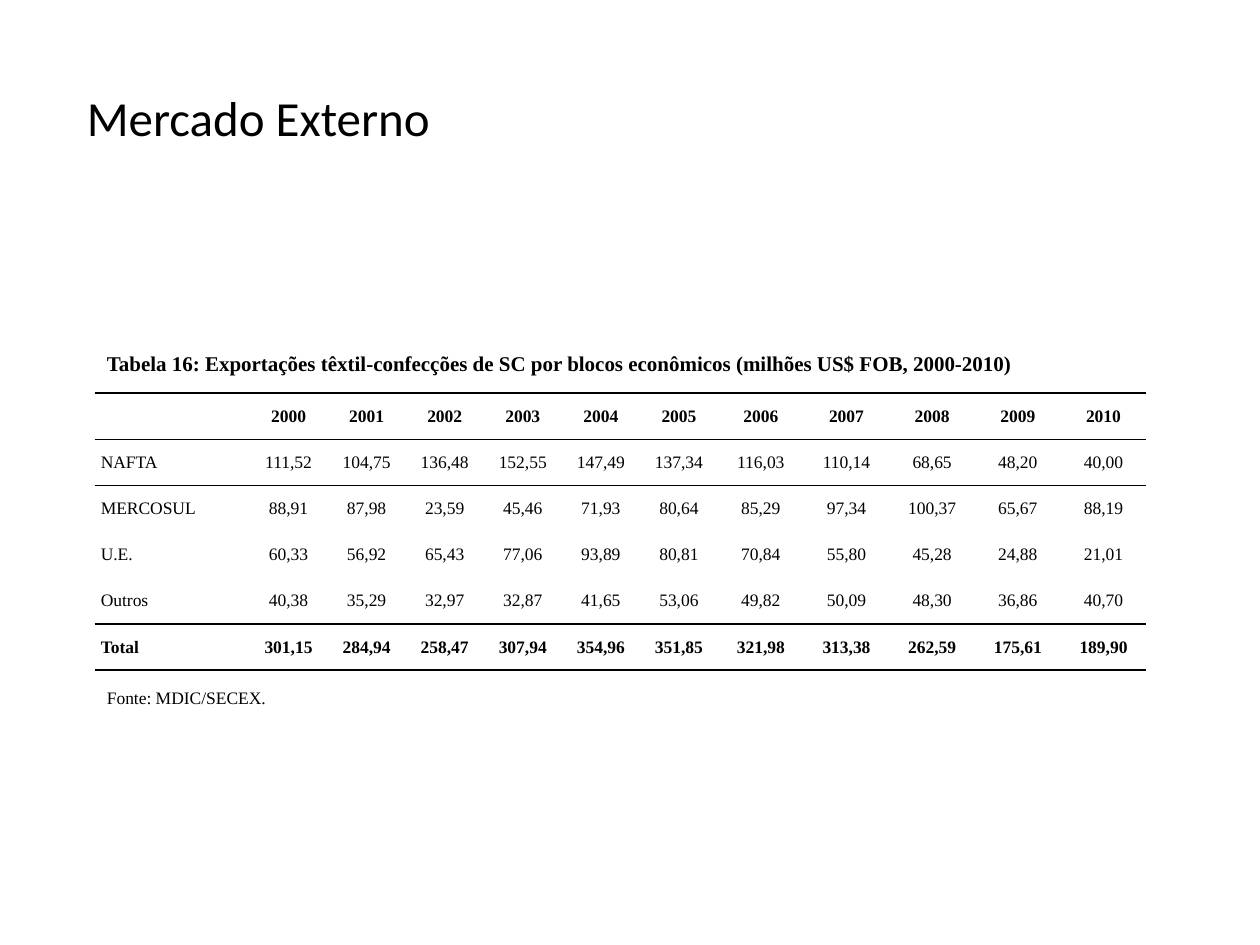
from lxml import etree
from pptx import Presentation
from pptx import util as u
from pptx.dml.color import RGBColor
from pptx.enum import text
from pptx.oxml.ns import qn

COLOURS = {"ink": "000000", "paper": "FFFFFF"}
SERIF = "Times New Roman"
UNIT = u.Inches(0.1)  # the page is a grid of 100 columns and 75 rows
NO_STYLE = "{2D5ABB26-0587-4C30-8999-92F81FD0307C}"

YEARS = [""] + [str(year) for year in range(2000, 2011)]
EXPORTS = """
NAFTA 111,52 104,75 136,48 152,55 147,49 137,34 116,03 110,14 68,65 48,20 40,00
MERCOSUL 88,91 87,98 23,59 45,46 71,93 80,64 85,29 97,34 100,37 65,67 88,19
U.E. 60,33 56,92 65,43 77,06 93,89 80,81 70,84 55,80 45,28 24,88 21,01
Outros 40,38 35,29 32,97 32,87 41,65 53,06 49,82 50,09 48,30 36,86 40,70
Total 301,15 284,94 258,47 307,94 354,96 351,85 321,98 313,38 262,59 175,61 189,90
"""
COLUMN_WEIGHTS = [12.3] + [6.2] * 6 + [6.8] * 5
RULED_EDGES = {0: "a:lnT", 1: "a:lnT", 4: "a:lnB", 5: "a:lnB"}  # by row


def grid(box):
    return [round(part * UNIT) for part in box]


def set_all(target, values):
    for name, value in values.items():
        setattr(target, name, value)


def write(para, words, **font):
    span = para.add_run()
    span.text = words
    set_all(span.font, font)
    span.font.color.rgb = RGBColor.from_string(COLOURS["ink"])


def add_line(page, box, words, frame_format, **font):
    frame = page.shapes.add_textbox(*grid(box)).text_frame
    set_all(frame, {"word_wrap": True, **frame_format})
    write(frame.paragraphs[0], words, **font)


def add_rule(cell, edge):
    line = etree.Element(qn(edge), w=str(u.Pt(1)))
    fill = etree.SubElement(line, qn("a:solidFill"))
    etree.SubElement(fill, qn("a:srgbClr"), val=COLOURS["ink"])
    cell._tc.get_or_add_tcPr().insert(0, line)


def add_exports_table(page, box):
    rows = [YEARS] + [line.split() for line in EXPORTS.strip().splitlines()]
    left, top, width, height = grid(box)
    table = page.shapes.add_table(
        len(rows), len(YEARS), left, top, width, height).table
    set_all(table, {"first_row": False, "horz_banding": False})
    table._tbl.tblPr.find(qn("a:tableStyleId")).text = NO_STYLE

    for column, weight in zip(table.columns, COLUMN_WEIGHTS):
        column.width = round(width * weight / sum(COLUMN_WEIGHTS))
    for r, values in enumerate(rows):
        table.rows[r].height = round(height / len(rows))
        for c, value in enumerate(values):
            cell = table.cell(r, c)
            set_all(cell, {
                "margin_left": u.Inches(0.05), "margin_right": u.Inches(0.05),
                "margin_top": 0, "margin_bottom": 0,
                "vertical_anchor": text.MSO_ANCHOR.MIDDLE})
            cell.fill.background()
            if r in RULED_EDGES:
                add_rule(cell, RULED_EDGES[r])
            para = cell.text_frame.paragraphs[0]
            if c:
                para.alignment = text.PP_ALIGN.CENTER
            if value:
                write(para, value, name=SERIF, size=u.Pt(10),
                      bold=r in (0, len(rows) - 1))


def build_page(page):
    page.background.fill.solid()
    page.background.fill.fore_color.rgb = RGBColor.from_string(COLOURS["paper"])

    # Title
    add_line(page, (5, 3, 90, 12.5), "Mercado Externo",
             {"vertical_anchor": text.MSO_ANCHOR.MIDDLE,
              "margin_left": u.Inches(0.19)},
             name="Calibri", size=u.Pt(28))

    # Caption, table and source
    grow = {"auto_size": text.MSO_AUTO_SIZE.SHAPE_TO_FIT_TEXT}
    add_line(page, (7.5, 27.3, 81.9, 3),
             "Tabela 16: Exportações têxtil-confecções de SC por blocos "
             "econômicos (milhões US$ FOB, 2000-2010)",
             grow, name=SERIF, size=u.Pt(12), bold=True)
    add_exports_table(page, (7.5, 31.2, 83.5, 22))
    add_line(page, (7.5, 54, 78, 2.7), "Fonte: MDIC/SECEX.",
             grow, name=SERIF, size=u.Pt(10))


def main():
    deck = Presentation()
    set_all(deck, {"slide_width": 100 * UNIT, "slide_height": 75 * UNIT})
    build_page(deck.slides.add_slide(deck.slide_layouts[6]))
    deck.save("out.pptx")


if __name__ == "__main__":
    main()
